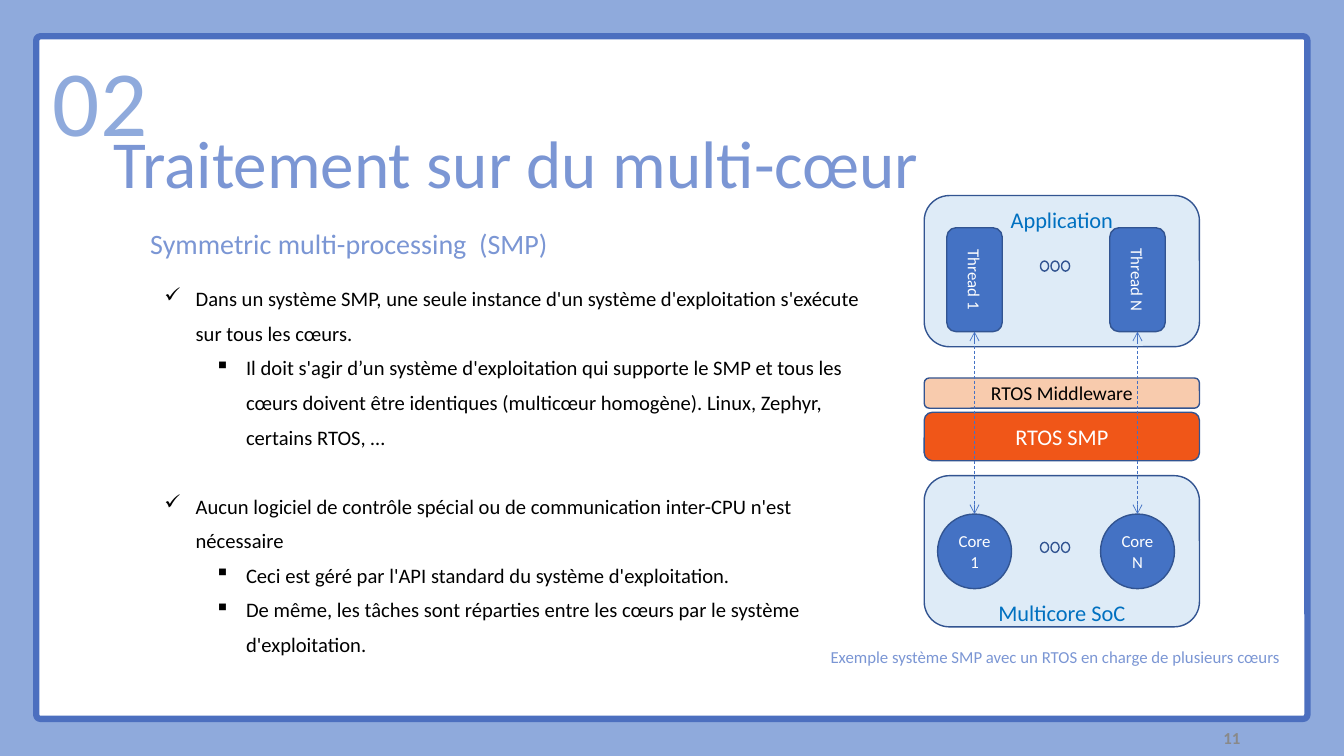
from dataclasses import dataclass

import lxml.etree
import pptx
import pptx.dml.color
import pptx.enum.dml
import pptx.enum.shapes
import pptx.enum.text
import pptx.oxml.ns
import pptx.util

Pt = pptx.util.Pt
Shape = pptx.enum.shapes.MSO_SHAPE
Align = pptx.enum.text.PP_ALIGN
Anchor = pptx.enum.text.MSO_ANCHOR


@dataclass(frozen=True)
class Theme:
    font: str = "Calibri"
    background: str = "8FAADC"
    frame: str = "4C6FBF"
    heading: str = "7B96D4"
    outline: str = "325491"
    panel: str = "DEEBF7"
    unit: str = "4472C4"
    middleware: str = "F8CBAD"
    rtos: str = "F05618"
    label: str = "0070C0"
    page_number: str = "898989"
    white: str = "FFFFFF"
    black: str = "000000"
    number_size: float = 66.6
    title_size: float = 48
    subtitle_size: float = 20
    block_size: float = 16
    body_size: float = 14.7
    layer_size: float = 14
    small_size: float = 12


@dataclass(frozen=True)
class Heading:
    text: str
    area: tuple[float, float, float, float]
    size: float
    color: str
    spacing: float
    align: Align = Align.LEFT
    bold: bool = False


@dataclass(frozen=True)
class Bullet:
    text: str
    level: int
    before: float = 0


@dataclass(frozen=True)
class Block:
    text: str
    top: float
    height: float
    fill: str
    color: str
    size: float
    anchor: Anchor = Anchor.MIDDLE
    inset: float = 0


THEME = Theme()
MARKS = {1: ("✓", 22.3), 2: ("▪", 58.3)}
HANGING = 22.3

HEADINGS = [
    Heading("Symmetric multi-processing  (SMP)", (107.3, 159.1, 361.4, 26.6),
            THEME.subtitle_size, THEME.heading, 1.11),
    Heading("Traitement sur du multi-cœur", (81.4, 76.3, 775.4, 85.7),
            THEME.title_size, THEME.heading, 1.18),
    Heading("02", (25.9, 9.4, 91.4, 102.2), THEME.number_size,
            THEME.background, 1.27, Align.CENTER),
    Heading("Exemple système SMP avec un RTOS en charge de plusieurs cœurs",
            (593.3, 460.1, 343.4, 32.4), THEME.small_size, THEME.heading, 1.11),
    Heading("11", (860, 520, 40, 15), THEME.small_size, THEME.page_number, 1,
            Align.CENTER, True),
]

BULLETS = [
    Bullet("Dans un système SMP, une seule instance d'un système d'exploitation "
           "s'exécute sur tous les cœurs.", 1),
    Bullet("Il doit s'agir d’un système d'exploitation qui supporte le SMP et tous les "
           "cœurs doivent être identiques (multicœur homogène). Linux, Zephyr, "
           "certains RTOS, …", 2),
    Bullet("Aucun logiciel de contrôle spécial ou de communication inter-CPU n'est "
           "nécessaire", 1, before=24.6),
    Bullet("Ceci est géré par l'API standard du système d'exploitation.", 2),
    Bullet("De même, les tâches sont réparties entre les cœurs par le système "
           "d'exploitation.", 2),
]

BLOCK_LEFT, BLOCK_WIDTH = 660.2, 196.6
BLOCKS = [
    Block("Multicore SoC", 339.8, 108, THEME.panel, THEME.label, THEME.block_size,
          Anchor.TOP, 83),
    Block("RTOS SMP", 294.5, 34.6, THEME.rtos, THEME.white, THEME.block_size),
    Block("RTOS Middleware", 270, 21.6, THEME.middleware, THEME.black, THEME.layer_size),
    Block("Application", 139.7, 108, THEME.panel, THEME.label, THEME.block_size,
          Anchor.TOP, 2),
]

UNIT_CENTERS = {"1": 696.1, "N": 812.5}
THREAD_TOP, THREAD_WIDTH, THREAD_HEIGHT = 162.7, 39.6, 74.2
CORE_TOP, CORE_WIDTH, CORE_HEIGHT = 367.2, 52.8, 53.3
DOT_LEFT, DOT_STEP, DOT_WIDTH, DOT_HEIGHT = 743.2, 7.5, 5.8, 7.2
DOT_TOPS = (387.4, 186.5)


def rgb(color: str) -> pptx.dml.color.RGBColor:
    return pptx.dml.color.RGBColor.from_string(color)


def write(para, text: str, *, size: float, color: str, align=Align.LEFT,
          spacing: float = 1, bold: bool = False) -> None:
    para.alignment = align
    para.line_spacing = spacing
    for index, line in enumerate(text.split("\n")):
        if index:
            para.add_line_break()
        span = para.add_run()
        span.text = line
        span.font.name = THEME.font
        span.font.size = Pt(size)
        span.font.bold = bold
        span.font.color.rgb = rgb(color)


def clear_margins(frame) -> None:
    frame.word_wrap = True
    frame.margin_left = frame.margin_right = frame.margin_top = frame.margin_bottom = 0


def add_box(page, area: tuple[float, float, float, float]):
    box = page.shapes.add_textbox(*map(Pt, area))
    clear_margins(box.text_frame)
    return box.text_frame


def add_figure(page, kind: Shape, area: tuple[float, float, float, float],
               fill: str | None, line: str = THEME.outline, width: float = 1):
    figure = page.shapes.add_shape(kind, *map(Pt, area))
    figure.shadow.inherit = False
    if fill:
        figure.fill.solid()
        figure.fill.fore_color.rgb = rgb(fill)
    else:
        figure.fill.background()
    figure.line.color.rgb = rgb(line)
    figure.line.width = Pt(width)
    clear_margins(figure.text_frame)
    return figure


def add_bullets(page, bullets: list[Bullet]) -> None:
    frame = add_box(page, (117.4, 197.3, 498.2, 273.6))
    for index, bullet in enumerate(bullets):
        para = frame.add_paragraph() if index else frame.paragraphs[0]
        mark, indent = MARKS[bullet.level]
        para.level = bullet.level
        if bullet.before:
            para.space_before = Pt(bullet.before)
        write(para, bullet.text, size=THEME.body_size, color=THEME.black, spacing=1.4)
        properties = para._p.get_or_add_pPr()
        properties.set("marL", str(Pt(indent)))
        properties.set("indent", str(-Pt(HANGING)))
        lxml.etree.SubElement(properties, pptx.oxml.ns.qn("a:buChar"), char=mark)


def add_unit(page, kind: Shape, text: str, center: float, top: float,
             width: float, height: float):
    unit = add_figure(page, kind, (center - width / 2, top, width, height), THEME.unit)
    write(unit.text_frame.paragraphs[0], text, size=THEME.small_size,
          color=THEME.white, align=Align.CENTER)
    return unit


def add_link(page, center: float) -> None:
    link = page.shapes.add_connector(
        pptx.enum.shapes.MSO_CONNECTOR.STRAIGHT, Pt(center),
        Pt(THREAD_TOP + THREAD_HEIGHT), Pt(center), Pt(CORE_TOP))
    link.line.color.rgb = rgb(THEME.unit)
    link.line.width = Pt(0.5)
    link.line.dash_style = pptx.enum.dml.MSO_LINE.DASH
    for end in ("a:headEnd", "a:tailEnd"):
        lxml.etree.SubElement(link.line._get_or_add_ln(), pptx.oxml.ns.qn(end), type="arrow")
    lxml.etree.SubElement(link._element.spPr, pptx.oxml.ns.qn("a:effectLst"))


def main() -> None:
    deck = pptx.Presentation()
    deck.slide_width, deck.slide_height = Pt(960), Pt(540)
    page = deck.slides.add_slide(deck.slide_layouts[6])
    page.background.fill.solid()
    page.background.fill.fore_color.rgb = rgb(THEME.background)

    # White frame
    border = add_figure(page, Shape.ROUNDED_RECTANGLE, (25.9, 25.9, 908, 487.6),
                        THEME.white, THEME.frame, 4.5)
    border.adjustments[0] = 0.006

    # Headings, caption, page number and body
    for heading in HEADINGS:
        write(add_box(page, heading.area).paragraphs[0], heading.text, size=heading.size,
              color=heading.color, align=heading.align, spacing=heading.spacing,
              bold=heading.bold)
    add_bullets(page, BULLETS)

    # Software and hardware layers
    for block in BLOCKS:
        layer = add_figure(page, Shape.ROUNDED_RECTANGLE,
                           (BLOCK_LEFT, block.top, BLOCK_WIDTH, block.height), block.fill)
        layer.text_frame.vertical_anchor = block.anchor
        layer.text_frame.margin_top = Pt(block.inset)
        write(layer.text_frame.paragraphs[0], block.text, size=block.size,
              color=block.color, align=Align.CENTER)

    # Ellipsis dots between the first and last unit
    for top in DOT_TOPS:
        for index in range(3):
            add_figure(page, Shape.OVAL,
                       (DOT_LEFT + index * DOT_STEP, top, DOT_WIDTH, DOT_HEIGHT), None)

    # Threads linked to cores
    for name, center in UNIT_CENTERS.items():
        add_unit(page, Shape.OVAL, f"Core\n{name}", center, CORE_TOP, CORE_WIDTH, CORE_HEIGHT)
        thread = add_unit(page, Shape.ROUNDED_RECTANGLE, f"Thread {name}", center,
                          THREAD_TOP, THREAD_WIDTH, THREAD_HEIGHT)
        thread.text_frame._txBody.bodyPr.set("vert", "vert")
        add_link(page, center)

    deck.save("out.pptx")


if __name__ == "__main__":
    main()
